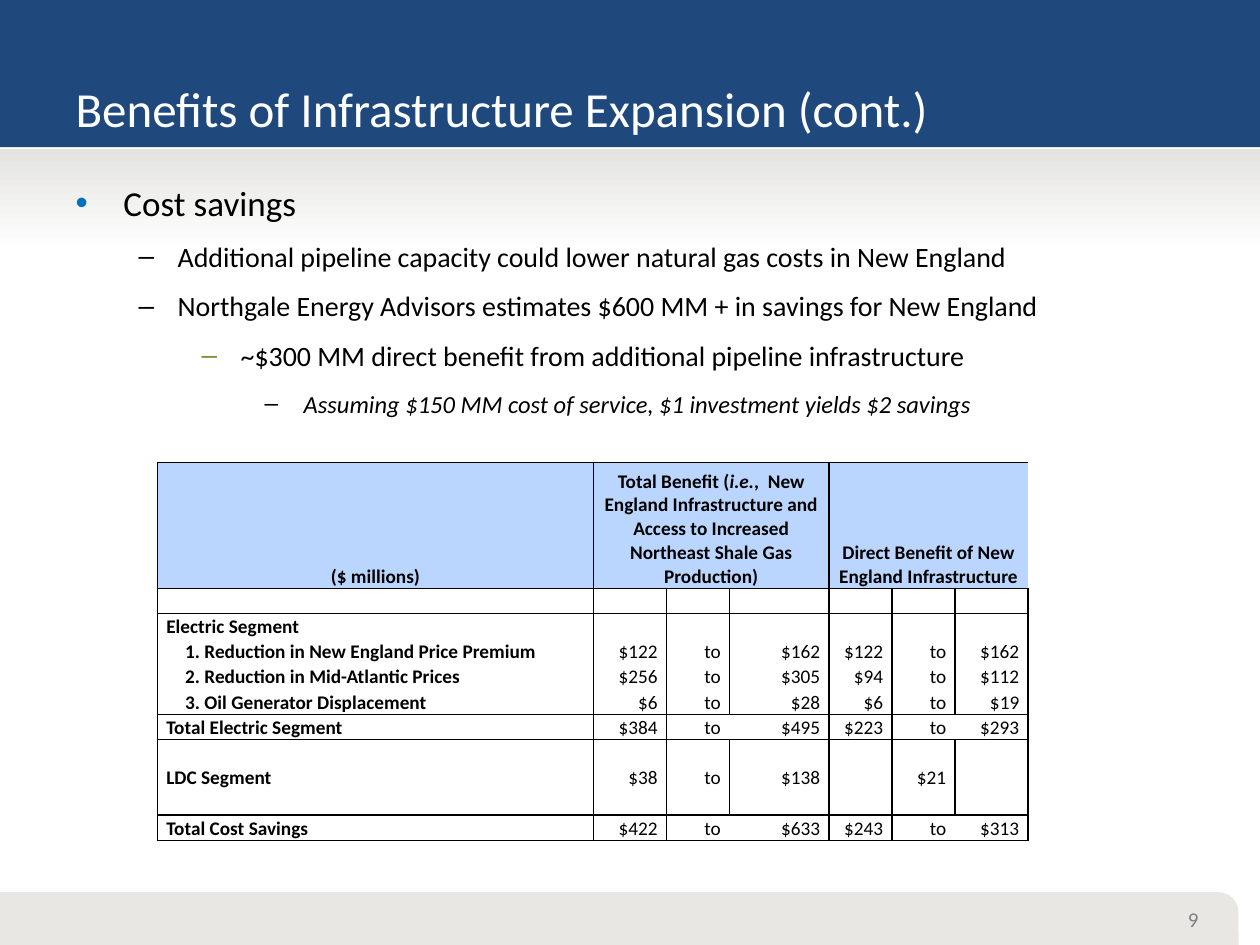
from lxml import etree
from pptx import Presentation
from pptx.dml.color import RGBColor
from pptx.enum.shapes import MSO_CONNECTOR, MSO_SHAPE
from pptx.enum.text import MSO_ANCHOR, MSO_AUTO_SIZE, PP_ALIGN
from pptx.oxml.ns import qn
from pptx.util import Inches, Pt

RECT, ROUND = MSO_SHAPE.RECTANGLE, MSO_SHAPE.ROUND_1_RECTANGLE
LEFT, MID, RIGHT = PP_ALIGN.LEFT, PP_ALIGN.CENTER, PP_ALIGN.RIGHT
BASE, CENTRE = MSO_ANCHOR.BOTTOM, MSO_ANCHOR.MIDDLE
INKS = {"navy": "1F497D", "wash": "E4E3E0", "foot": "E8E7E4", "white": "FFFFFF",
        "black": "000000", "grey": "808080", "head": "BAD6FE",
        "blue": "0071BC", "green": "77933C"}
NO_GRID = "{2D5ABB26-0587-4C30-8999-92F81FD0307C}"
WIDE, HIGH = Inches(10), Inches(7.5)


def area(x, y, w, h):
    """Turn percent of the slide's width and height into lengths."""
    return [int(side * part / 100) for side, part in
            zip((WIDE, HIGH, WIDE, HIGH), (x, y, w, h))]


def write(para, text, size, ink="black", bold=False, slant=False):
    run = para.add_run()
    run.text = text
    font = run.font
    font.name, font.size = "Calibri", Pt(size)
    font.bold, font.italic = bold, slant
    font.color.rgb = RGBColor.from_string(INKS[ink])


deck = Presentation()
deck.slide_width, deck.slide_height = WIDE, HIGH
slide = deck.slides.add_slide(deck.slide_layouts[1])
shapes = slide.shapes
title, body = slide.placeholders
tree = title.element.getparent()

# Bands
for kind, spot, ink in [(RECT, (0, 0, 100, 15.73), "navy"),
                        (RECT, (0, 15.6, 100, 11.07), "wash"),
                        (ROUND, (0, 94.4, 98.3, 5.6), "foot")]:
    band = shapes.add_shape(kind, *area(*spot))
    band.shadow.inherit = False
    band.line.fill.background()
    if ink == "wash":
        band.fill.gradient()
        band.fill.gradient_angle = 270
        for stop, tint in zip(band.fill.gradient_stops, ("wash", "white")):
            stop.color.rgb = RGBColor.from_string(INKS[tint])
    else:
        band.fill.solid()
        band.fill.fore_color.rgb = RGBColor.from_string(INKS[ink])
band.adjustments[0] = 0.38

x, y, w, h = area(0, 15.73, 100, 0)
rule = shapes.add_connector(MSO_CONNECTOR.STRAIGHT, x, y, x + w, y)
rule.line.width = Pt(0.75)
rule.line.color.rgb = RGBColor.from_string(INKS["white"])
etree.SubElement(rule.element.spPr, qn("a:effectLst"))

# Title
tree.append(title.element)
title.left, title.top, title.width, title.height = area(5, 1.73, 75.5, 13.47)
frame = title.text_frame
frame.auto_size = MSO_AUTO_SIZE.NONE
frame.vertical_anchor = BASE
para = frame.paragraphs[0]
para.alignment, para.line_spacing = LEFT, 0.85
write(para, "Benefits of Infrastructure Expansion (cont.)", 28, "white")

# Page number
frame = shapes.add_textbox(*area(93.3, 95.6, 5, 3.33)).text_frame
frame.word_wrap = True
frame.vertical_anchor = CENTRE
write(frame.paragraphs[0], "9", 12, "grey")

# Table
cols = [3.46, 0.58, 0.5, 0.79, 0.5, 0.5, 0.58]
rows = [1] + [0.2] * 10
heads = {0: [("($ millions)", False)],
         1: [("Total Benefit (", False), ("i.e.", True),
             (",  New England Infrastructure and Access to Increased "
              "Northeast Shale Gas Production)", False)],
         4: [("Direct Benefit of New England Infrastructure", False)]}
blank = [""] * 7
data = [
    blank,
    ["Electric Segment"] + [""] * 6,
    ["1. Reduction in New England Price Premium",
     "$122", "to", "$162", "$122", "to", "$162"],
    ["2. Reduction in Mid-Atlantic Prices",
     "$256", "to", "$305", "$94", "to", "$112"],
    ["3. Oil Generator Displacement", "$6", "to", "$28", "$6", "to", "$19"],
    ["Total Electric Segment", "$384", "to", "$495", "$223", "to", "$293"],
    blank,
    ["LDC Segment", "$38", "to", "$138", "", "$21", ""],
    blank,
    ["Total Cost Savings", "$422", "to", "$633", "$243", "to", "$313"],
]
x, y, w, h = area(12.5, 48.93, 69.1, 40)
grid = shapes.add_table(len(rows), len(cols), x, y, w, h).table
grid.first_row = grid.horz_banding = False
grid._tbl.tblPr.find(qn("a:tableStyleId")).text = NO_GRID
for col, size in zip(grid.columns, cols):
    col.width = Inches(size)
for row, size in zip(grid.rows, rows):
    row.height = Inches(size)
for c in (1, 4):
    grid.cell(0, c).merge(grid.cell(0, c + 2))

across = {0, 1, 6, 10, 11}
down = {0, 1, 4, 7}
split = {2, 5}
for r in range(len(rows)):
    edges = down if r in (0, 6, 10) else down | split
    for c in range(len(cols)):
        cell = grid.cell(r, c)
        cell.margin_left = cell.margin_right = Inches(0.07)
        cell.margin_top = cell.margin_bottom = 0
        cell.vertical_anchor = BASE
        props = cell._tc.get_or_add_tcPr()
        for tag, drawn in [("a:lnL", c in edges), ("a:lnR", c + 1 in edges),
                           ("a:lnT", r in across), ("a:lnB", r + 1 in across)]:
            if drawn:
                edge = etree.SubElement(props, qn(tag), w=str(Pt(1)))
                fill = etree.SubElement(edge, qn("a:solidFill"))
                etree.SubElement(fill, qn("a:srgbClr"), val=INKS["black"])
        para = cell.text_frame.paragraphs[0]
        para.font.size = Pt(11)
        if r == 0:
            cell.fill.solid()
            cell.fill.fore_color.rgb = RGBColor.from_string(INKS["head"])
            para.alignment = MID
            for text, slant in heads.get(c, []):
                write(para, text, 11, bold=True, slant=slant)
            continue
        cell.fill.background()
        para.alignment = RIGHT if c else LEFT
        text = data[r - 1][c]
        if text:
            write(para, text, 11, bold=c == 0)
        if c == 0 and text[:1].isdigit():
            para._p.get_or_add_pPr().set("indent", str(Inches(0.15)))

# Bullets
tree.append(body.element)
body.left, body.top, body.width, body.height = area(5, 19.2, 90, 70.13)
frame = body.text_frame
frame.auto_size = MSO_AUTO_SIZE.NONE
points = [
    (0, "Cost savings", 20, "blue"),
    (1, "Additional pipeline capacity could lower natural gas costs in New England",
     16, "black"),
    (1, "Northgale Energy Advisors estimates $600 MM + in savings for New England",
     16, "black"),
    (2, "~$300 MM direct benefit from additional pipeline infrastructure",
     16, "green"),
    (3, "Assuming $150 MM cost of service, $1 investment yields $2 savings",
     14, "black"),
]
for n, (level, text, size, ink) in enumerate(points):
    para = frame.add_paragraph() if n else frame.paragraphs[0]
    para.level, para.alignment, para.line_spacing = level, LEFT, 0.85
    para.space_before, para.space_after = Pt(6 if n else 0), Pt(6)
    hang = 0.31 if level else 0.38
    props = para._p.get_or_add_pPr()
    props.set("marL", str(Inches(level * 0.5 + hang)))
    props.set("indent", str(-Inches(hang)))
    tint = etree.SubElement(props, qn("a:buClr"))
    etree.SubElement(tint, qn("a:srgbClr"), val=INKS[ink])
    etree.SubElement(props, qn("a:buFont"), typeface="Arial")
    etree.SubElement(props, qn("a:buChar"), char="–" if level else "•")
    write(para, text, size, slant=level == 3)

deck.save("out.pptx")
